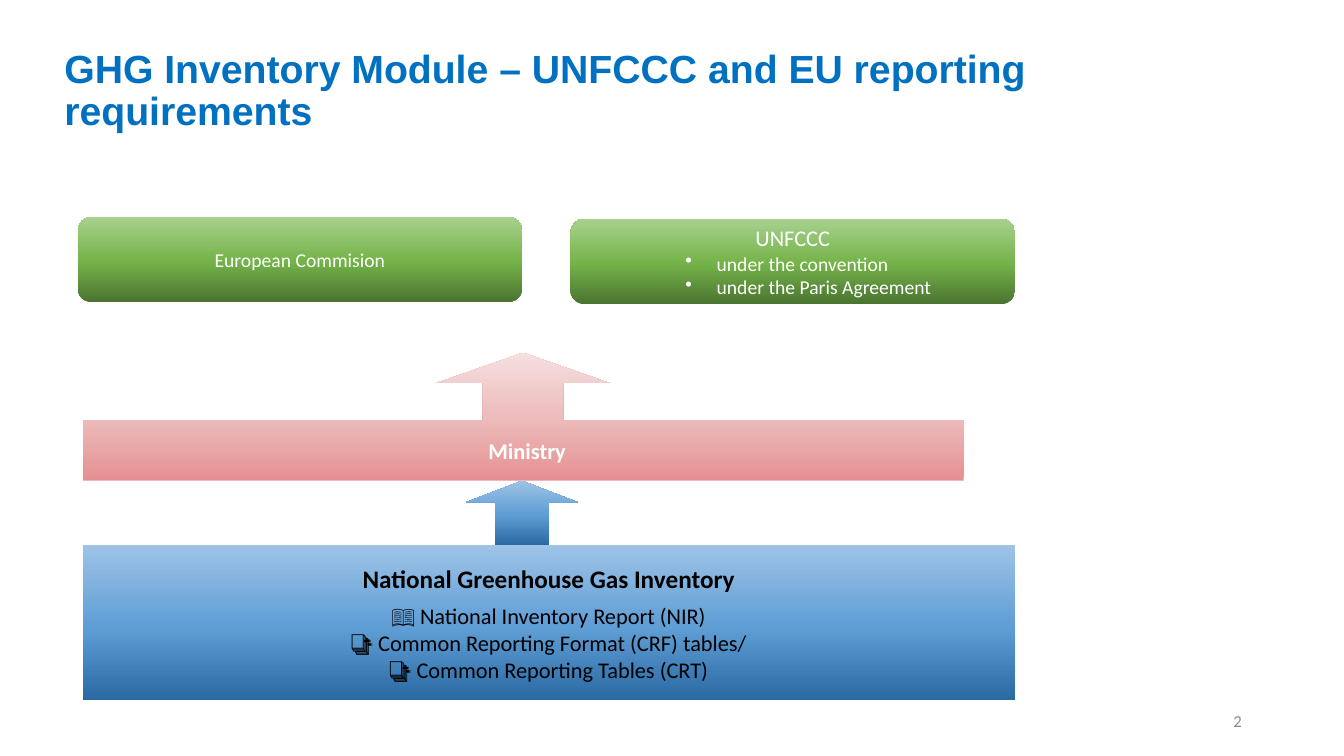
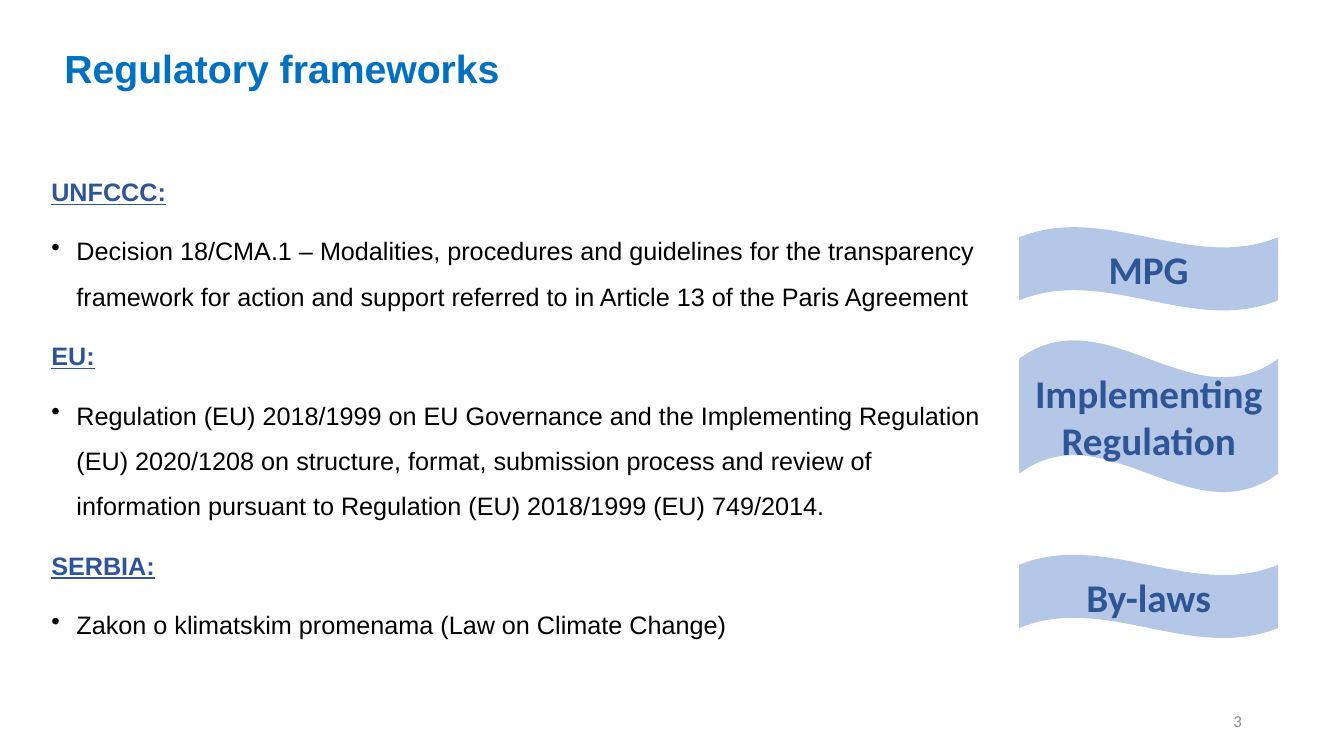
from copy import deepcopy

from lxml import etree
from pptx import Presentation
from pptx.dml.color import RGBColor
from pptx.enum import shapes, text
from pptx.oxml import ns
from pptx.util import Pt

BLUE, NAVY, PALE_BLUE = "0070C0", "2F5597", "B4C7E7"
BLACK, WHITE, GREY = "000000", "FFFFFF", "8C8C8C"
# Gradients run from the bottom to the top: (position, colour)
BLUES = [(0, "2A69A2"), (0.48, "609ED6"), (1, "9DC3E6")]
REDS = [(0, "E59090"), (0.5, "EDBCBC"), (1, "F5DFDF")]
GREENS = [(0, "4B7430"), (0.48, "74B349"), (1, "A9D18E")]

KIND, ALIGN, ANCHOR = shapes.MSO_SHAPE, text.PP_ALIGN, text.MSO_ANCHOR


def rgb(value):
    return RGBColor.from_string(value)


def set_box(sp, box):
    sp.left, sp.top, sp.width, sp.height = (Pt(v) for v in box)


def clear_margins(tf):
    tf.margin_left = tf.margin_top = tf.margin_right = tf.margin_bottom = 0


def write(tf, index, words, size, color, bold=False, face="Calibri",
          align=ALIGN.CENTER):
    """Fill the paragraph at index, adding it after the first."""
    p = tf.paragraphs[0] if index == 0 else tf.add_paragraph()
    p.text = words
    p.alignment = align
    f = p.font
    f.name, f.size, f.bold = face, Pt(size), bold
    f.color.rgb = rgb(color)
    return p


def indent(p, left, hanging=0, bullet=False):
    pPr = p._p.get_or_add_pPr()
    pPr.set("marL", str(Pt(left)))
    pPr.set("indent", str(-Pt(hanging)))
    if bullet:
        mark = etree.Element(ns.qn("a:buChar"), char="•")
        # Bullets come before the default run properties
        pPr.find(ns.qn("a:defRPr")).addprevious(mark)


def fill_gradient(sp, stops):
    sp.fill.gradient()
    sp.fill.gradient_angle = 90
    last = sp._element.spPr.findall(".//" + ns.qn("a:gs"))[-1]
    last.addnext(deepcopy(last))
    for stop, (position, color) in zip(sp.fill.gradient_stops, stops):
        stop.position = position
        stop.color.rgb = rgb(color)


def add_block(s, kind, box, paint, adjust=(), wrap=True):
    """Borderless shape; paint is one colour or a list of gradient stops."""
    sp = s.shapes.add_shape(kind, *(Pt(v) for v in box))
    sp.shadow.inherit = False
    sp.line.fill.background()
    for i, value in enumerate(adjust):
        sp.adjustments[i] = value
    if isinstance(paint, str):
        sp.fill.solid()
        sp.fill.fore_color.rgb = rgb(paint)
    else:
        fill_gradient(sp, paint)
    tf = sp.text_frame
    tf.word_wrap = wrap
    tf.vertical_anchor = ANCHOR.MIDDLE
    return sp


def add_page(prs, title, number):
    """Slide with the shared title style and page number."""
    s = prs.slides.add_slide(prs.slide_layouts[5])
    set_box(s.shapes.title, (46, 35.3, 723.6, 72))
    tf = s.shapes.title.text_frame
    tf.auto_size = text.MSO_AUTO_SIZE.NONE
    tf.word_wrap = True
    tf.vertical_anchor = ANCHOR.TOP
    clear_margins(tf)
    p = write(tf, 0, title, 28, BLUE, True, "Arial", ALIGN.LEFT)
    p.line_spacing = 0.9

    sp = s.shapes.add_textbox(Pt(678.2), Pt(500.4), Pt(216), Pt(28.8))
    sp.text_frame.word_wrap = True
    sp.text_frame.vertical_anchor = ANCHOR.MIDDLE
    write(sp.text_frame, 0, str(number), 12, GREY, align=ALIGN.RIGHT)
    return s


def add_inventory(s, box):
    """Source of the reports, with the arrow that leads up from it."""
    x, y, w, h = box
    add_block(s, KIND.UP_ARROW, (x + 273.6, y - 46.1, 80.6, 46.1), BLUES,
              (0.477, 0.337))
    tf = add_block(s, KIND.RECTANGLE, box, BLUES, wrap=False).text_frame
    p = write(tf, 0, "National Greenhouse Gas Inventory", 18, BLACK, True)
    p.space_after = Pt(6)
    write(tf, 1, "📖 National Inventory Report (NIR)", 16, BLACK)
    write(tf, 2, "📑 Common Reporting Format (CRF) tables/\v"
          "📑 Common Reporting Tables (CRT)", 16, BLACK)


def add_ministry(s, box):
    sp = add_block(s, KIND.UP_ARROW_CALLOUT, box, REDS,
                   (0.629, 0.674, 0.236, 0.474), wrap=False)
    sp.text_frame.margin_left = Pt(13)
    write(sp.text_frame, 0, "Ministry", 16, WHITE, True)


def add_recipient(s, box, name, size, points=()):
    tf = add_block(s, KIND.FLOWCHART_ALTERNATE_PROCESS, box,
                   GREENS).text_frame
    write(tf, 0, name, size, WHITE)
    for i, point in enumerate(points, 1):
        p = write(tf, i, point, 14, WHITE, align=ALIGN.LEFT)
        p.level = 1
        indent(p, 94.3, 22.3, bullet=True)


def add_frameworks(s, box, sections):
    """Underlined headings, each with one bulleted rule."""
    sp = s.shapes.add_textbox(*(Pt(v) for v in box))
    tf = sp.text_frame
    tf.word_wrap = True
    clear_margins(tf)
    for i, (heading, rule) in enumerate(sections):
        head = write(tf, 2 * i, heading, 18, NAVY, True, "Arial", ALIGN.LEFT)
        head.font.underline = True
        indent(head, 2)
        item = write(tf, 2 * i + 1, rule, 18, BLACK, False, "Arial",
                     ALIGN.LEFT)
        indent(item, 20, 18, bullet=True)
        for p in (head, item):
            p.line_spacing = 1.5
            p.space_before = Pt(10)


def add_waves(s, left, width, waves):
    for top, height, label in waves:
        sp = add_block(s, KIND.WAVE, (left, top, width, height), PALE_BLUE)
        write(sp.text_frame, 0, label, 28, NAVY, True)


def reporting_slide(prs):
    s = add_page(prs, "GHG Inventory Module – UNFCCC and EU reporting "
                 "requirements", 2)
    add_inventory(s, (59, 389.5, 666, 110.9))
    add_ministry(s, (59, 252, 629.3, 91.4))
    add_recipient(s, (55.5, 154.8, 317.5, 61.2), "European Commision", 14)
    add_recipient(s, (407.5, 156.2, 317.5, 61.2), "UNFCCC", 16,
                  ["under the convention", "under the Paris Agreement"])


def regulation_slide(prs):
    s = add_page(prs, "Regulatory frameworks", 3)
    add_frameworks(s, (34.6, 115.2, 673.2, 365), [
        ("UNFCCC:",
         "Decision 18/CMA.1 – Modalities, procedures and guidelines for the "
         "transparency framework for action and support referred to in "
         "Article 13 of the Paris Agreement"),
        ("EU:",
         "Regulation (EU) 2018/1999 on EU Governance and the Implementing "
         "Regulation (EU) 2020/1208 on structure, format, submission process "
         "and review of information pursuant to Regulation (EU) 2018/1999 "
         "(EU) 749/2014."),
        ("SERBIA:",
         "Zakon o klimatskim promenama (Law on Climate Change)"),
    ])
    add_waves(s, 728, 185, [(162, 60, "MPG"),
                            (242.6, 109.4, "Implementing Regulation"),
                            (396, 60, "By-laws")])


def main():
    prs = Presentation()
    prs.slide_width, prs.slide_height = Pt(960), Pt(540)
    reporting_slide(prs)
    regulation_slide(prs)
    prs.save("out.pptx")


if __name__ == "__main__":
    main()
